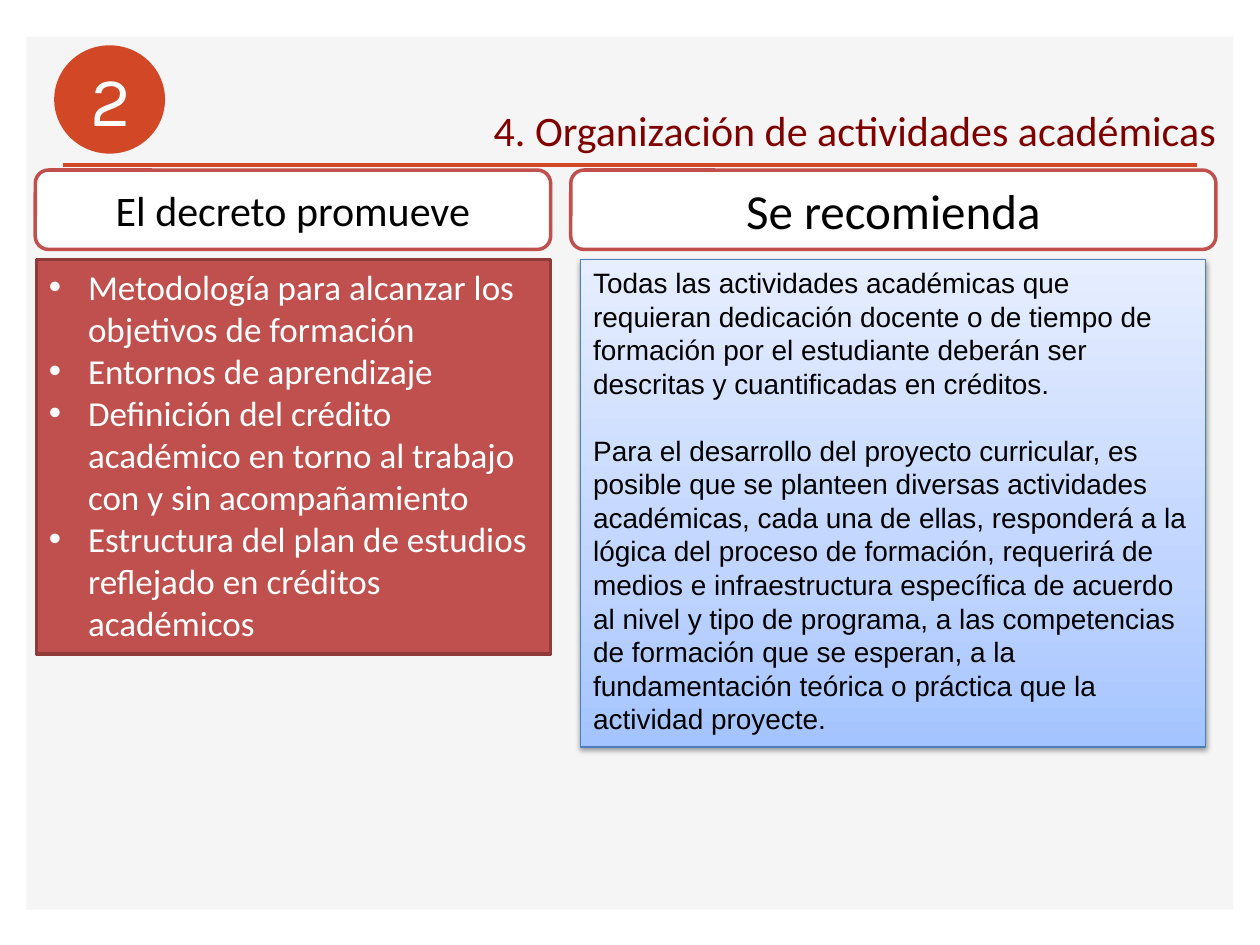
import copy

import pptx
import pptx.dml.color
import pptx.enum.shapes
import pptx.enum.text
import pptx.oxml
import pptx.oxml.ns
import pptx.util

Inches = pptx.util.Inches
Pt = pptx.util.Pt
SHAPE = pptx.enum.shapes.MSO_SHAPE
ALIGN = pptx.enum.text.PP_ALIGN
ANCHOR = pptx.enum.text.MSO_ANCHOR
qn = pptx.oxml.ns.qn

COLORS = {
    "panel": "F5F5F5", "accent": "D24726", "title": "800000",
    "red": "C0504D", "red_edge": "8E3B39", "blue_edge": "4B7EBC",
    "white": "FFFFFF", "black": "000000",
}
BLUE_STOPS = [(0, "A4C4FF"), (0.35, "BFD4FF"), (1, "E6EEFF")]

PROMOTED = [
    "Metodología para alcanzar los objetivos de formación",
    "Entornos de aprendizaje",
    "Definición del crédito académico en torno al trabajo con y sin acompañamiento",
    "Estructura del plan de estudios reflejado en créditos académicos",
]
RECOMMENDED = [
    "Todas las actividades académicas que requieran dedicación docente o de tiempo "
    "de formación por el estudiante deberán ser descritas y cuantificadas en créditos.",
    "Para el desarrollo del proyecto curricular, es posible que se planteen diversas "
    "actividades académicas, cada una de ellas, responderá a la lógica del proceso de "
    "formación, requerirá de medios e infraestructura específica de acuerdo al nivel y "
    "tipo de programa, a las competencias de formación que se esperan, a la "
    "fundamentación teórica o práctica que la actividad proyecte.",
]


def rgb(value):
    return pptx.dml.color.RGBColor.from_string(value)


def xml(tag, **attrs):
    el = pptx.oxml.parse_xml(
        f'<a:{tag} xmlns:a="http://schemas.openxmlformats.org/drawingml/2006/main"/>')
    for name, value in attrs.items():
        el.set(name, str(value))
    return el


def add_text(sp, paragraphs, size, color, font="Calibri", align=ALIGN.LEFT,
             anchor=ANCHOR.TOP, wrap=True, bullet=None, gap=0, spacing=None):
    tf = sp.text_frame
    tf.word_wrap = wrap
    tf.vertical_anchor = anchor
    for i, text in enumerate(paragraphs):
        p = tf.paragraphs[0] if i == 0 else tf.add_paragraph()
        p.alignment = align
        if i and gap:
            p.space_before = Pt(gap)
        if spacing:
            p.line_spacing = spacing
        r = p.add_run()
        r.text = text
        r.font.name, r.font.size = font, Pt(size)
        r.font.color.rgb = rgb(color)
        if bullet:
            pPr = p._p.get_or_add_pPr()
            indent = Inches(0.31)
            pPr.set("marL", str(indent))
            pPr.set("indent", str(-indent))
            pPr.append(xml("buFont", typeface="Arial"))
            pPr.append(xml("buChar", char=bullet))


def add_box(s, kind, box, fill=None, line=None, width=2):
    sp = s.shapes.add_shape(kind, *map(Inches, box))
    sp.shadow.inherit = False
    if fill:
        sp.fill.solid()
        sp.fill.fore_color.rgb = rgb(fill)
    if line:
        sp.line.color.rgb = rgb(line)
        sp.line.width = Pt(width)
    else:
        sp.line.fill.background()
    return sp


def add_gradient(sp, stops, angle):
    sp.fill.gradient()
    sp.fill.gradient_angle = angle
    gs_list = sp._element.spPr.find(".//" + qn("a:gsLst"))
    while len(gs_list) < len(stops):
        gs_list.append(copy.deepcopy(gs_list[0]))
    for stop, (position, color) in zip(sp.fill.gradient_stops, stops):
        stop.position = position
        stop.color.rgb = rgb(color)


def add_shadow(sp, color, opacity, blur, distance, angle):
    shadow = xml("outerShdw", blurRad=Pt(blur), dist=Pt(distance),
                 dir=angle * 60000, rotWithShape=0)
    tint = xml("srgbClr", val=color)
    tint.append(xml("alpha", val=opacity * 1000))
    shadow.append(tint)
    sp._element.spPr.find(qn("a:effectLst")).append(shadow)


def background(s, box):
    add_box(s, SHAPE.RECTANGLE, box, COLORS["panel"])
    left, top, width, _ = box
    y = Inches(top + 1.02)
    rule = s.shapes.add_connector(pptx.enum.shapes.MSO_CONNECTOR.STRAIGHT,
                                  Inches(left + 0.29), y, Inches(left + width - 0.29), y)
    rule.line.color.rgb = rgb(COLORS["accent"])
    rule.line.width = Pt(2)
    rule._element.spPr.append(xml("effectLst"))


def number_badge(s, box, number):
    left, top, width, _ = box
    add_box(s, SHAPE.OVAL, box, COLORS["accent"])
    label = s.shapes.add_textbox(Inches(left - 0.15), Inches(top + 0.04),
                                 Inches(width + 0.32), Inches(0.77))
    add_text(label, [number], 40, COLORS["white"], font="Karla", align=ALIGN.CENTER)


def title(s, box, text):
    tb = s.shapes.add_textbox(*map(Inches, box))
    add_text(tb, [text], 24, COLORS["title"], wrap=False)


def heading(s, box, text, size):
    sp = add_box(s, SHAPE.ROUNDED_RECTANGLE, box, COLORS["white"], COLORS["red"])
    add_text(sp, [text], size, COLORS["black"], align=ALIGN.CENTER, anchor=ANCHOR.MIDDLE)


def promoted_panel(s, box):
    sp = add_box(s, SHAPE.RECTANGLE, box, COLORS["red"], COLORS["red_edge"])
    add_text(sp, PROMOTED, 20, COLORS["white"], bullet="•")


def recommended_panel(s, box):
    sp = add_box(s, SHAPE.RECTANGLE, box, line=COLORS["blue_edge"], width=0.75)
    add_gradient(sp, BLUE_STOPS, 90)
    add_shadow(sp, COLORS["black"], 38, 3.1, 1.6, 90)
    add_text(sp, RECOMMENDED, 16, COLORS["black"], font="Arial", gap=19)


def main():
    prs = pptx.Presentation()
    prs.slide_width, prs.slide_height = Inches(10), Inches(7.5)
    s = prs.slides.add_slide(prs.slide_layouts[6])

    # Page frame and header
    background(s, (0.21, 0.29, 9.58, 6.93))
    number_badge(s, (0.43, 0.36, 0.88, 0.86), "2")
    title(s, (3.82, 0.78, 5.98, 0.5), "4. Organización de actividades académicas")

    # Two columns: contents, then headings above them
    promoted_panel(s, (0.29, 2.06, 4.08, 3.13))
    recommended_panel(s, (4.61, 2.06, 4.96, 3.87))
    heading(s, (0.28, 1.35, 4.09, 0.63), "El decreto promueve", 24)
    heading(s, (4.53, 1.35, 5.12, 0.63), "Se recomienda", 28)

    prs.save("out.pptx")


if __name__ == "__main__":
    main()
